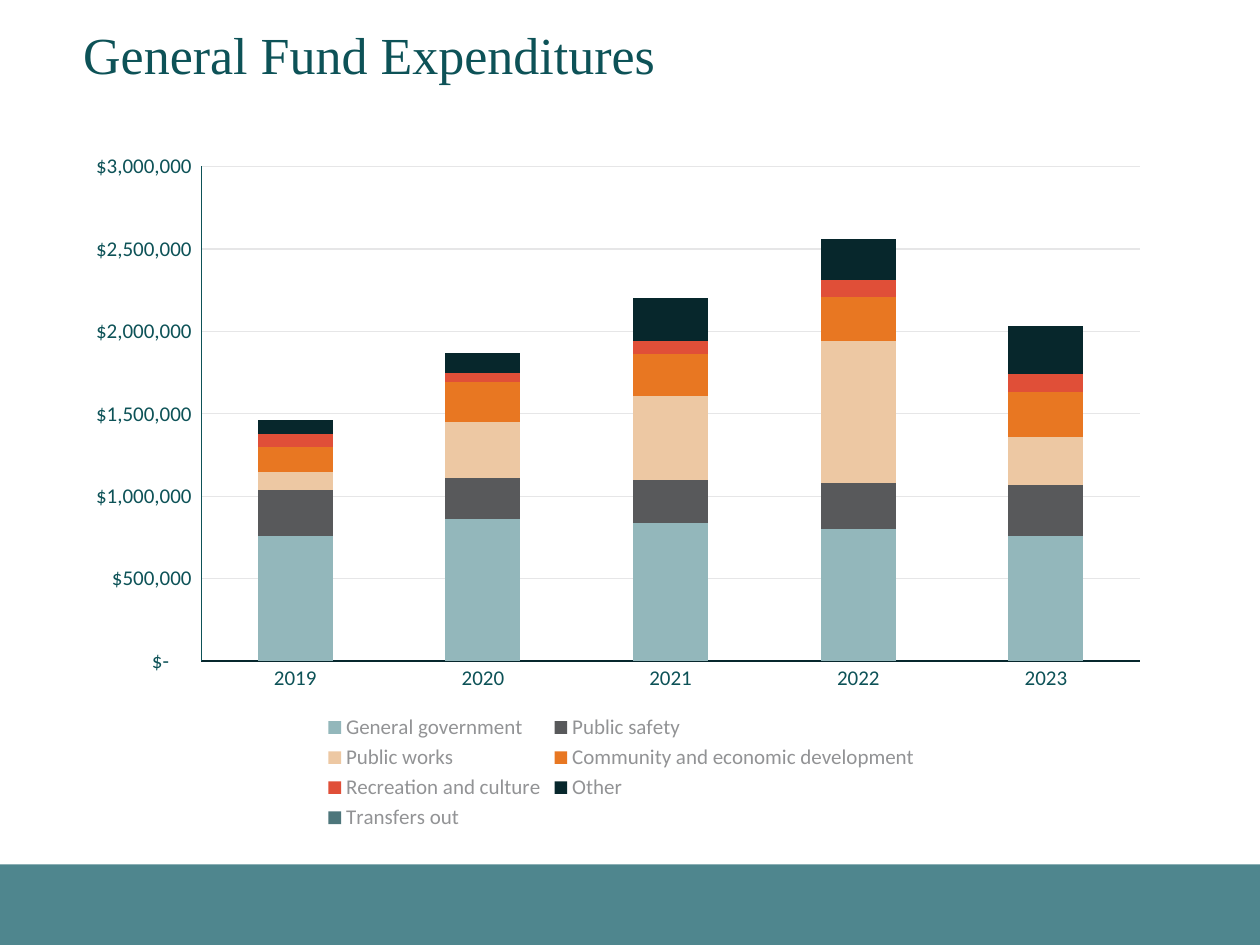
from lxml import etree
from pptx import Presentation
from pptx.chart.data import CategoryChartData
from pptx.dml.color import RGBColor
from pptx.enum.chart import XL_CHART_TYPE, XL_LEGEND_POSITION, XL_TICK_MARK
from pptx.enum.shapes import MSO_SHAPE
from pptx.enum.text import MSO_ANCHOR, PP_ALIGN
from pptx.oxml.ns import qn
from pptx.util import Pt

STACKED = XL_CHART_TYPE.COLUMN_STACKED
BOTTOM = XL_LEGEND_POSITION.BOTTOM
NO_TICK = XL_TICK_MARK.NONE
TITLE_ONLY = 5

COLORS = {
    "title": "0D5257", "band": "4F868E", "text": "58595B", "legend": "929395",
    "category_line": "07272D", "grid": "E6E6E7",
}
DOLLARS = '_("$"* #,##0_);_("$"* \\(#,##0\\);_("$"* "-"??_);_(@_)'
YEARS = ["2019", "2020", "2021", "2022", "2023"]
EXPENDITURES = [
    ("General government", "93B7BB", [760000, 860000, 840000, 800000, 760000]),
    ("Public safety", "58595B", [280000, 250000, 260000, 280000, 310000]),
    ("Public works", "EDC8A3", [110000, 340000, 510000, 860000, 290000]),
    ("Community and economic development", "E87722",
     [150000, 240000, 250000, 270000, 270000]),
    ("Recreation and culture", "E04F38", [80000, 60000, 80000, 100000, 110000]),
    ("Other", "07272C", [80000, 120000, 260000, 250000, 290000]),
    ("Transfers out", "4D767B", [None, 0, 0, 0, None]),
]


def rgb(name):
    return RGBColor.from_string(COLORS[name])


def set_font(font, name, size, color):
    font.name, font.size, font.bold = name, Pt(size), False
    font.color.rgb = rgb(color)


def set_line(line, color):
    line.color.rgb = rgb(color)
    line.width = Pt(0.75)


def set_layout(parent, index, x, y, w, h, inner=False):
    """Place a chart part by fractions of the chart area."""
    for old in parent.findall(qn("c:layout")):
        parent.remove(old)
    layout = etree.Element(qn("c:layout"))
    manual = etree.SubElement(layout, qn("c:manualLayout"))
    values = [("layoutTarget", "inner")] if inner else []
    values += [("xMode", "edge"), ("yMode", "edge"),
               ("x", x), ("y", y), ("w", w), ("h", h)]
    for tag, value in values:
        etree.SubElement(manual, qn("c:" + tag)).set("val", str(value))
    parent.insert(index, layout)


def add_band(slide, x, y, w, h):
    sp = slide.shapes.add_shape(MSO_SHAPE.RECTANGLE, Pt(x), Pt(y), Pt(w), Pt(h))
    sp.shadow.inherit = False
    sp.fill.solid()
    sp.fill.fore_color.rgb = rgb("band")
    sp.line.fill.background()


def set_title(slide, text, x, y, w, h):
    sp = slide.shapes.title
    sp.left, sp.top, sp.width, sp.height = Pt(x), Pt(y), Pt(w), Pt(h)
    tf = sp.text_frame
    tf.margin_left = tf.margin_right = tf.margin_top = tf.margin_bottom = Pt(7.2)
    tf.word_wrap = False
    tf.vertical_anchor = MSO_ANCHOR.MIDDLE
    p = tf.paragraphs[0]
    p.alignment = PP_ALIGN.LEFT
    p.line_spacing = 0.9
    r = p.add_run()
    r.text = text
    set_font(r.font, "Times New Roman", 29.7, "title")


def format_axes(chart):
    for axis, line in ((chart.category_axis, "category_line"),
                       (chart.value_axis, "title")):
        axis.major_tick_mark = axis.minor_tick_mark = NO_TICK
        set_font(axis.tick_labels.font, "Calibri", 12, "title")
        set_line(axis.format.line, line)
    values = chart.value_axis
    values.minimum_scale, values.maximum_scale = 0, 3000000
    values.major_unit = 500000
    values.has_major_gridlines = True
    set_line(values.major_gridlines.format.line, "grid")
    values.tick_labels.number_format = DOLLARS
    values.tick_labels.number_format_is_linked = False


def add_expenditure_chart(slide, x, y, w, h):
    data = CategoryChartData(number_format=DOLLARS)
    data.categories = YEARS
    for name, _, values in EXPENDITURES:
        data.add_series(name, values)
    chart = slide.shapes.add_chart(STACKED, Pt(x), Pt(y), Pt(w), Pt(h), data).chart
    chart.has_title = False
    set_font(chart.font, "Calibri", 10, "text")

    plot = chart.plots[0]
    plot.gap_width, plot.overlap = 150, 100
    plot.vary_by_categories = False
    for series, (_, color, _) in zip(plot.series, EXPENDITURES):
        series.format.fill.solid()
        series.format.fill.fore_color.rgb = RGBColor.from_string(color)
        series.invert_if_negative = False
    format_axes(chart)

    chart.has_legend = True
    legend = chart.legend
    legend.position = BOTTOM
    legend.include_in_layout = False
    set_font(legend.font, "Calibri", 12, "legend")

    area = chart.element.find(".//" + qn("c:plotArea"))
    set_layout(area, 0, 0.12, 0.04, 0.86, 0.71, inner=True)
    key = chart.element.find(".//" + qn("c:legend"))
    set_layout(key, 1, 0.23, 0.82, 0.55, 0.18)


def main():
    prs = Presentation()
    prs.slide_width, prs.slide_height = Pt(720), Pt(540)
    slide = prs.slides.add_slide(prs.slide_layouts[TITLE_ONLY])
    add_band(slide, 0, 494, 720, 46)
    set_title(slide, "General Fund Expenditures", 40.3, 13.7, 349.2, 38.9)
    add_expenditure_chart(slide, 40.3, 79.2, 623.5, 398.2)
    prs.save("out.pptx")


if __name__ == "__main__":
    main()
